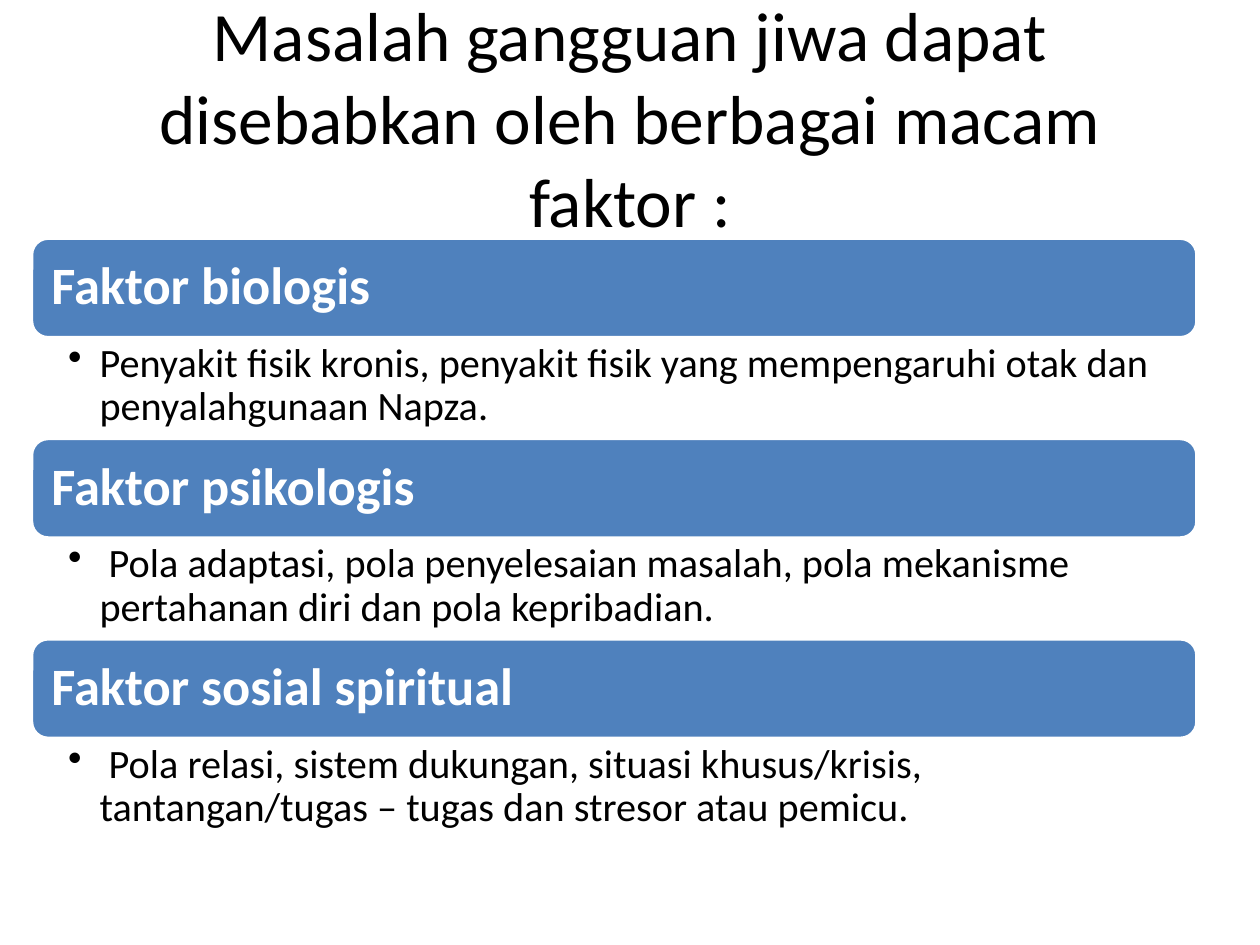
"""Build a slide listing three groups of factors behind mental disorders."""
from dataclasses import dataclass

from lxml.etree import SubElement
from pptx import Presentation
from pptx.dml.color import RGBColor
from pptx.enum.shapes import MSO_SHAPE
from pptx.enum.text import MSO_ANCHOR, PP_ALIGN
from pptx.oxml.ns import qn
from pptx.util import Inches, Pt


@dataclass(frozen=True)
class Theme:
    font: str = "Calibri"
    bar: RGBColor = RGBColor(0x4F, 0x81, 0xBD)
    light: RGBColor = RGBColor(0xFF, 0xFF, 0xFF)
    dark: RGBColor = RGBColor(0, 0, 0)
    title_size: float = 39.6
    heading_size: float = 30
    body_size: float = 23


def write(box, text, size, color, anchor, insets, align=PP_ALIGN.LEFT, bold=False):
    frame = box.text_frame
    frame.word_wrap = True
    frame.vertical_anchor = anchor
    frame.margin_left, frame.margin_top, frame.margin_right, frame.margin_bottom = map(Inches, insets)
    frame.text = text
    para = frame.paragraphs[0]
    para.alignment = align
    font = para.runs[0].font
    font.name, font.size, font.bold = theme.font, Pt(size), bold
    font.color.rgb = color
    return para


theme = Theme()
factors = [
    ("Faktor biologis",
     "Penyakit fisik kronis, penyakit fisik yang mempengaruhi otak dan penyalahgunaan Napza."),
    ("Faktor psikologis",
     " Pola adaptasi, pola penyelesaian masalah, pola mekanisme pertahanan diri dan pola kepribadian."),
    ("Faktor sosial spiritual",
     " Pola relasi, sistem dukungan, situasi khusus/krisis, tantangan/tugas – tugas dan stresor atau pemicu."),
]

deck = Presentation()
deck.slide_width, deck.slide_height = Inches(10), Inches(7.5)
page = deck.slides.add_slide(deck.slide_layouts[6])

title = page.shapes.add_textbox(Inches(0.5), Inches(0.3), Inches(9), Inches(1.25))
write(title, "Masalah gangguan jiwa dapat disebabkan oleh berbagai macam faktor :",
      theme.title_size, theme.dark, MSO_ANCHOR.MIDDLE, (0.1, 0.05, 0.1, 0.05), PP_ALIGN.CENTER)

left, width = Inches(0.25), Inches(9.25)
first_top, bar_height, body_height = Inches(1.89), Inches(0.79), Inches(0.8)

for row, (heading, details) in enumerate(factors):
    top = first_top + row * (bar_height + body_height)
    bar = page.shapes.add_shape(MSO_SHAPE.ROUNDED_RECTANGLE, left, top, width, bar_height)
    bar.shadow.inherit = False
    bar.fill.solid()
    bar.fill.fore_color.rgb = theme.bar
    bar.line.color.rgb = theme.light
    bar.line.width = Pt(2)
    para = write(bar, heading, theme.heading_size, theme.light, MSO_ANCHOR.MIDDLE, (0.12,) * 4, bold=True)
    para.line_spacing = 0.9

    body = page.shapes.add_textbox(left, top + bar_height, width, body_height)
    para = write(body, details, theme.body_size, theme.dark, MSO_ANCHOR.TOP, (0.29, 0.04, 0.23, 0.04))
    para.line_spacing = 0.9
    properties = para._p.get_or_add_pPr()
    properties.set("marL", str(Inches(0.25)))
    properties.set("indent", str(-Inches(0.25)))
    SubElement(properties, qn("a:buChar")).set("char", "•")

deck.save("out.pptx")
